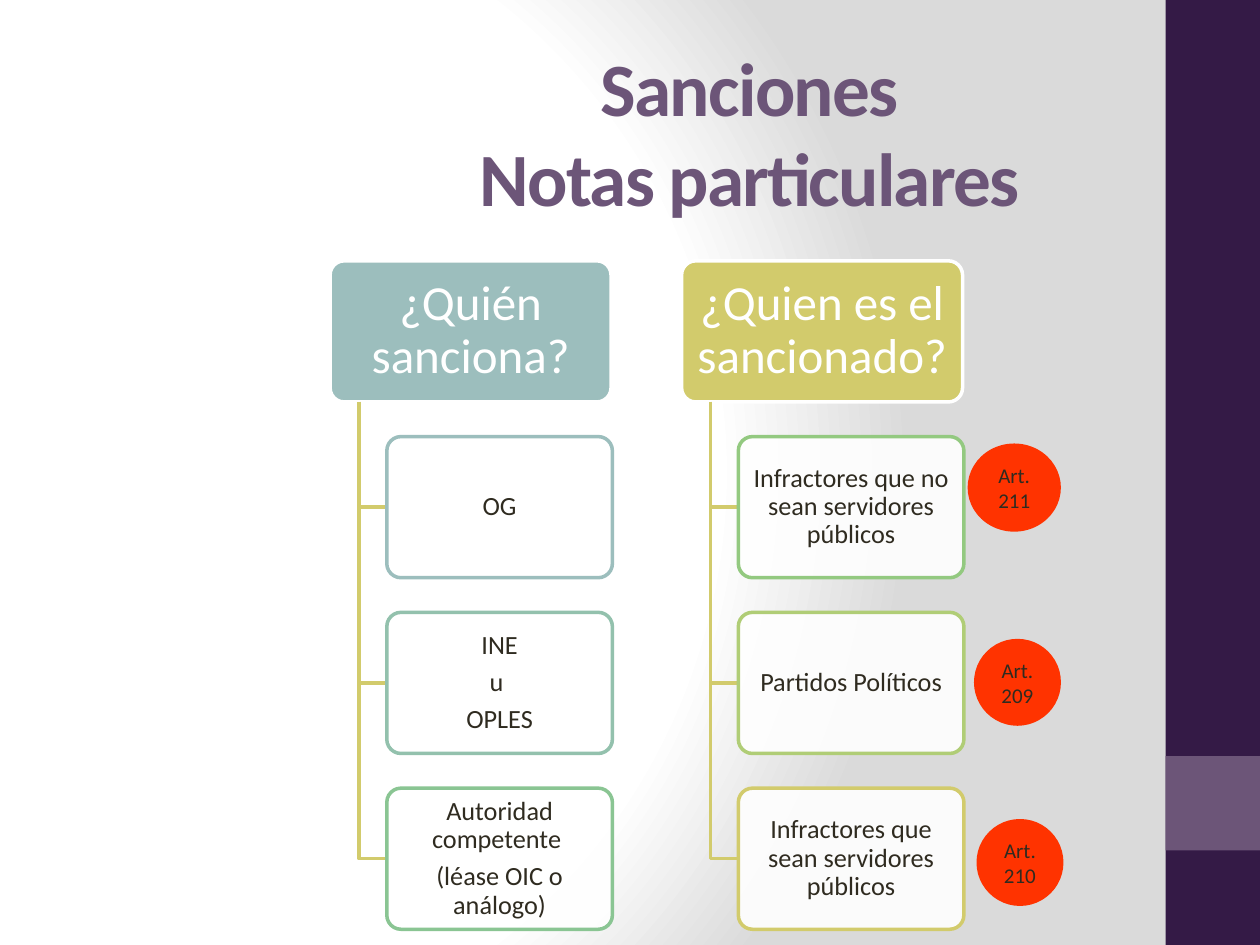
from pptx import Presentation
from pptx.dml.color import RGBColor
from pptx.enum.shapes import MSO_SHAPE
from pptx.enum.text import MSO_ANCHOR, PP_ALIGN
from pptx.oxml import parse_xml
from pptx.oxml.ns import qn
from pptx.util import Inches, Pt

RECTANGLE, ROUNDED, OVAL = MSO_SHAPE.RECTANGLE, MSO_SHAPE.ROUNDED_RECTANGLE, MSO_SHAPE.OVAL
MIDDLE, CENTER = MSO_ANCHOR.MIDDLE, PP_ALIGN.CENTER

WHITE = RGBColor(0xFF, 0xFF, 0xFF)
INK = RGBColor(0x2F, 0x2B, 0x20)
DARK_PURPLE = RGBColor(0x34, 0x1A, 0x46)
PURPLE = RGBColor(0x6C, 0x55, 0x78)
TEAL = RGBColor(0x9C, 0xBE, 0xBD)
SEA_GREEN = RGBColor(0x93, 0xC1, 0xAD)
MINT = RGBColor(0x8A, 0xC5, 0x93)
GREEN = RGBColor(0x93, 0xC9, 0x80)
LIME = RGBColor(0xB0, 0xCD, 0x76)
OLIVE = RGBColor(0xD2, 0xCB, 0x6C)
RED = RGBColor(0xFF, 0x33, 0x00)

DRAWING_NS = "http://schemas.openxmlformats.org/drawingml/2006/main"
GRADIENT = f"""<a:gradFill xmlns:a="{DRAWING_NS}" rotWithShape="1"><a:gsLst>
<a:gs pos="0"><a:srgbClr val="FFFFFF"/></a:gs>
<a:gs pos="75000"><a:srgbClr val="FFFFFF"/></a:gs>
<a:gs pos="100000"><a:srgbClr val="DADADA"/></a:gs></a:gsLst>
<a:path path="circle"><a:fillToRect l="20000" t="50000" r="100000" b="50000"/></a:path>
</a:gradFill>"""

# Text formats: insets are horizontal and vertical
TITLE = {"size": 43, "color": PURPLE, "bold": True, "insets": (0.1, 0.05)}
HEADING = {"size": 28, "color": WHITE, "line_spacing": 0.9, "space_after": Pt(10),
           "insets": (0.09, 0.07)}
ITEM = {"size": 15, "color": INK, "line_spacing": 0.9, "space_after": Pt(5),
        "insets": (0.06, 0.05)}
BADGE = {"size": 12, "color": INK, "insets": (0.1, 0.05)}

# Tree layout
COLUMN_LEFT, COLUMN_STEP = 2.62, 2.79
HEADING_TOP, BOX_HEIGHT, ROW_STEP = 2.07, 1.12, 1.395
HEADING_WIDTH, ITEM_WIDTH = 2.23, 1.79
TRUNK_INDENT, ITEM_INDENT = 0.23, 0.45

COLUMNS = [
    ("¿Quién sanciona?", TEAL, [
        (["OG"], TEAL),
        (["INE", "u ", "OPLES"], SEA_GREEN),
        (["Autoridad competente ", "(léase OIC o análogo)"], MINT)]),
    ("¿Quien es el sancionado?", OLIVE, [
        (["Infractores que no sean servidores públicos"], GREEN),
        (["Partidos Políticos"], LIME),
        (["Infractores que sean servidores públicos"], OLIVE)]),
]
BADGES = [("Art. 211", 7.68, 3.52, 0.74, 0.7),
          ("Art. 209", 7.73, 5.07, 0.69, 0.69),
          ("Art. 210", 7.75, 6.5, 0.69, 0.69)]


def paint_background(slide):
    slide.background.fill.solid()
    solid = next(slide.element.iter(qn("a:solidFill")))
    solid.getparent().replace(solid, parse_xml(GRADIENT))


def write(box, lines, style):
    frame = box.text_frame
    across, down = (Inches(inset) for inset in style["insets"])
    settings = {"word_wrap": True, "vertical_anchor": MIDDLE, "margin_left": across,
                "margin_right": across, "margin_top": down, "margin_bottom": down}
    for name, value in settings.items():
        setattr(frame, name, value)
    frame.text = "\n".join(lines)
    for para in frame.paragraphs:
        para.alignment = CENTER
        for name in ("line_spacing", "space_after"):
            if name in style:
                setattr(para, name, style[name])
        for span in para.runs:
            font_values = {"name": "Calibri", "size": Pt(style["size"]),
                           "bold": style.get("bold", False)}
            for name, value in font_values.items():
                setattr(span.font, name, value)
            span.font.color.rgb = style["color"]


def add_box(slide, kind, left, top, width, height, fill, outline=None):
    box = slide.shapes.add_shape(kind, Inches(left), Inches(top), Inches(width), Inches(height))
    box.shadow.inherit = False
    box.fill.solid()
    box.fill.fore_color.rgb = fill
    if kind == ROUNDED:
        box.adjustments[0] = 0.1
    if outline is None:
        box.line.fill.background()
    else:
        box.line.color.rgb = outline
        box.line.width = Pt(2)
    return box


def make_translucent(box):
    color = next(box.element.spPr.find(qn("a:solidFill")).iter(qn("a:srgbClr")))
    color.append(parse_xml(f'<a:alpha xmlns:a="{DRAWING_NS}" val="90000"/>'))


def add_branch(slide, left, top, right, bottom):
    builder = slide.shapes.build_freeform(Inches(left), Inches(top))
    builder.add_line_segments([(Inches(left), Inches(bottom)), (Inches(right), Inches(bottom))],
                              close=False)
    branch = builder.convert_to_shape()
    branch.shadow.inherit = False
    branch.fill.background()
    branch.line.color.rgb = OLIVE
    branch.line.width = Pt(2)


def add_column(slide, left, heading, color, items):
    box = add_box(slide, ROUNDED, left, HEADING_TOP, HEADING_WIDTH, BOX_HEIGHT, color, WHITE)
    write(box, [heading], HEADING)
    item_left = left + ITEM_INDENT
    for row, (lines, outline) in enumerate(items, start=1):
        top = HEADING_TOP + row * ROW_STEP
        add_branch(slide, left + TRUNK_INDENT, HEADING_TOP + BOX_HEIGHT,
                   item_left, top + BOX_HEIGHT / 2)
        item = add_box(slide, ROUNDED, item_left, top, ITEM_WIDTH, BOX_HEIGHT, WHITE, outline)
        make_translucent(item)
        write(item, lines, ITEM)


def add_title(slide):
    title = slide.shapes.add_textbox(Inches(2.02), Inches(0.62), Inches(7.86), Inches(0.85))
    write(title, ["Sanciones\vNotas particulares"], TITLE)
    for span in title.text_frame.paragraphs[0].runs:
        span.font._element.set("spc", "-100")


def main():
    deck = Presentation()
    deck.slide_width, deck.slide_height = Inches(10), Inches(7.5)
    slide = deck.slides.add_slide(deck.slide_layouts[6])

    # Background and side band
    paint_background(slide)
    add_box(slide, RECTANGLE, 9.25, 0, 0.75, 7.5, DARK_PURPLE)
    add_box(slide, RECTANGLE, 9.25, 6, 0.75, 0.75, PURPLE)

    # Title and the two trees
    add_title(slide)
    for index, column in enumerate(COLUMNS):
        add_column(slide, COLUMN_LEFT + index * COLUMN_STEP, *column)

    # Article badges
    for label, *place in BADGES:
        write(add_box(slide, OVAL, *place, RED), [label], BADGE)

    deck.save("out.pptx")


if __name__ == "__main__":
    main()
